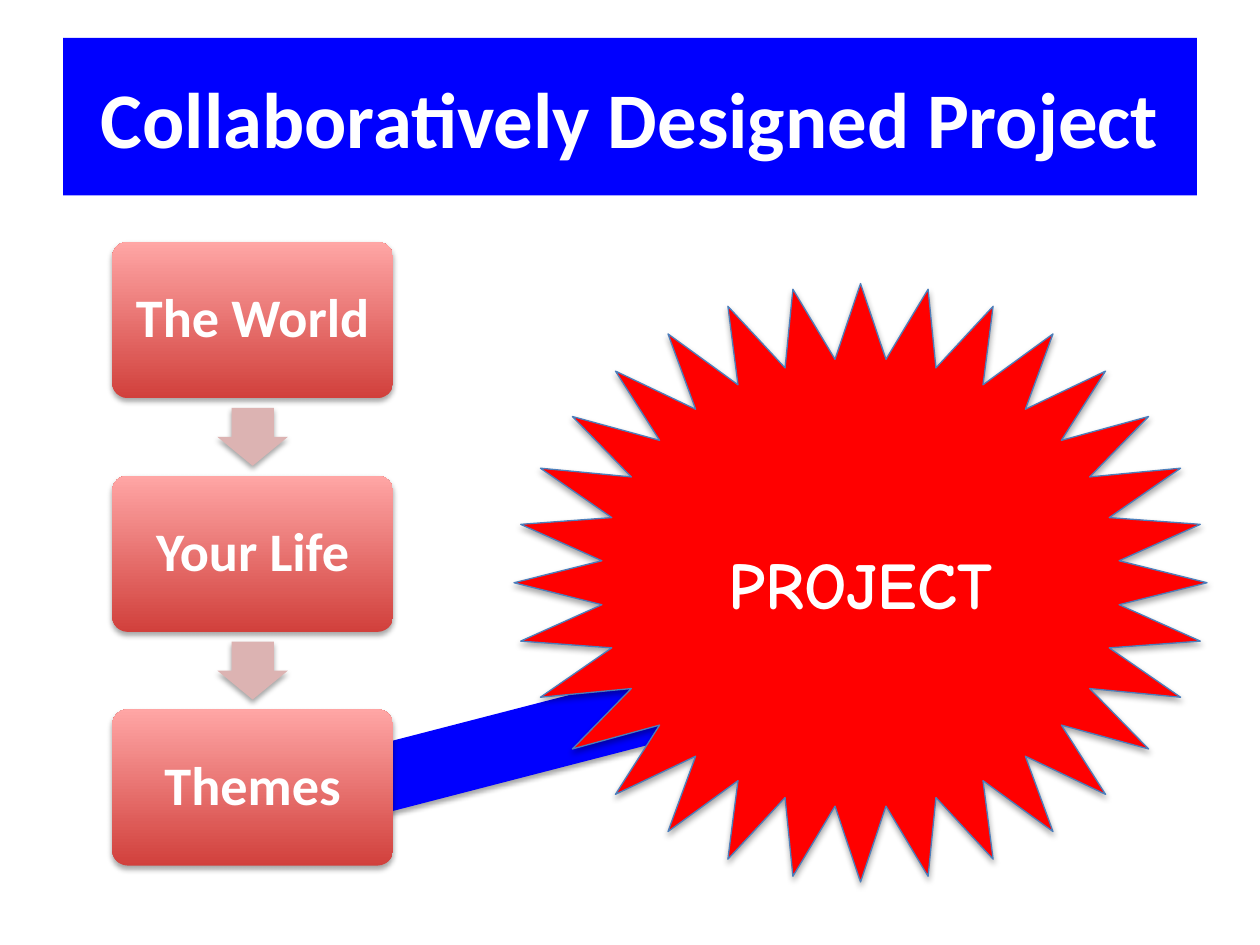
from dataclasses import dataclass

import pptx
import pptx.dml.color
import pptx.enum.shapes
import pptx.enum.text
import pptx.oxml
import pptx.oxml.ns
import pptx.util

Inches = pptx.util.Inches
Pt = pptx.util.Pt
Shape = pptx.enum.shapes.MSO_SHAPE


@dataclass(frozen=True)
class Theme:
    blue: str = "0000FF"
    red: str = "FF0000"
    star_edge: str = "4B7EBC"
    step_dark: str = "D1403C"
    step_light: str = "FFA6A5"
    step_arrow: str = "DCB3B2"
    text: str = "FFFFFF"
    font: str = "Calibri"
    star_font: str = "Comic Neue"
    title_size: int = 45
    step_size: int = 31
    star_size: int = 38


THEME = Theme()


def rgb(value):
    return pptx.dml.color.RGBColor.from_string(value)


def fill_solid(shape, color):
    shape.fill.solid()
    shape.fill.fore_color.rgb = rgb(color)


def add_shadowed(slide, preset, box):
    """Add a borderless preset shape with a soft shadow straight below it."""
    shape = slide.shapes.add_shape(preset, *box)
    shape.line.fill.background()
    shape.shadow.inherit = False
    effects = shape._element.spPr.find(pptx.oxml.ns.qn("a:effectLst"))
    effects.append(pptx.oxml.parse_xml(
        f'<a:outerShdw {pptx.oxml.ns.nsdecls("a")} blurRad="{Pt(3.1)}" '
        f'dist="{Pt(1.8)}" dir="5400000" rotWithShape="0">'
        '<a:srgbClr val="000000"><a:alpha val="35000"/></a:srgbClr>'
        '</a:outerShdw>'))
    return shape


def write(shape, text, font, size):
    """Put one centred bold line in the shape and return its paragraph."""
    frame = shape.text_frame
    frame.word_wrap = True
    frame.auto_size = pptx.enum.text.MSO_AUTO_SIZE.NONE
    frame.vertical_anchor = pptx.enum.text.MSO_ANCHOR.MIDDLE
    line = frame.paragraphs[0]
    line.alignment = pptx.enum.text.PP_ALIGN.CENTER
    run = line.add_run()
    run.text = text
    run.font.name = font
    run.font.size = Pt(size)
    run.font.bold = True
    run.font.color.rgb = rgb(THEME.text)
    return line


def place_title(slide, box, text):
    title = slide.shapes.title
    title.left, title.top, title.width, title.height = box
    fill_solid(title, THEME.blue)
    write(title, text, THEME.font, THEME.title_size)


def add_themes_arrow(slide, box):
    """Add the tilted arrow that leads from the last step to the project."""
    arrow = add_shadowed(slide, Shape.RIGHT_ARROW, box)
    arrow.rotation = 345.5
    fill_solid(arrow, THEME.blue)


def add_step(slide, box, text):
    step = add_shadowed(slide, Shape.ROUNDED_RECTANGLE, box)
    step.adjustments[0] = 0.1
    step.fill.gradient()
    step.fill.gradient_angle = 90
    for stop, color in zip(step.fill.gradient_stops,
                           (THEME.step_dark, THEME.step_light)):
        stop.color.rgb = rgb(color)
    frame = step.text_frame
    frame.margin_left = frame.margin_right = Inches(0.13)
    frame.margin_top = frame.margin_bottom = Inches(0.13)
    write(step, text, THEME.font, THEME.step_size).line_spacing = 0.9


def add_step_arrow(slide, center_x, center_y):
    length, breadth = Inches(0.46), Inches(0.56)
    arrow = add_shadowed(slide, Shape.RIGHT_ARROW, (
        center_x - length // 2, center_y - breadth // 2, length, breadth))
    arrow.rotation = 90
    arrow.adjustments[0] = 0.6
    arrow.adjustments[1] = 0.5
    fill_solid(arrow, THEME.step_arrow)


def add_steps(slide, box, labels):
    """Stack equal steps in the box, with a down arrow in each gap."""
    left, top, width, height = box
    step_height = Inches(1.24)
    gap = (height - len(labels) * step_height) // (len(labels) - 1)
    for index, label in enumerate(labels):
        step_top = top + index * (step_height + gap)
        if index:
            add_step_arrow(slide, left + width // 2, step_top - gap // 2)
        add_step(slide, (left, step_top, width, step_height), label)


def add_project_star(slide, box, text):
    star = add_shadowed(slide, Shape.STAR_32_POINT, box)
    fill_solid(star, THEME.red)
    star.line.color.rgb = rgb(THEME.star_edge)
    star.line.width = Pt(0.75)
    write(star, text, THEME.star_font, THEME.star_size)


def inch_box(*lengths):
    return tuple(Inches(length) for length in lengths)


def main():
    deck = pptx.Presentation()
    deck.slide_width, deck.slide_height = Inches(10), Inches(7.5)
    slide = deck.slides.add_slide(deck.slide_layouts.get_by_name("Title Only"))
    place_title(slide, inch_box(0.5, 0.3, 9, 1.25),
                "Collaboratively Designed Project")
    add_themes_arrow(slide, inch_box(2.31, 5.19, 4.92, 1.08))
    add_steps(slide, inch_box(0.89, 1.92, 2.23, 4.95),
              ("The World", "Your Life", "Themes"))
    add_project_star(slide, inch_box(4.08, 2.25, 5.5, 4.75), "PROJECT")
    deck.save("out.pptx")


if __name__ == "__main__":
    main()
